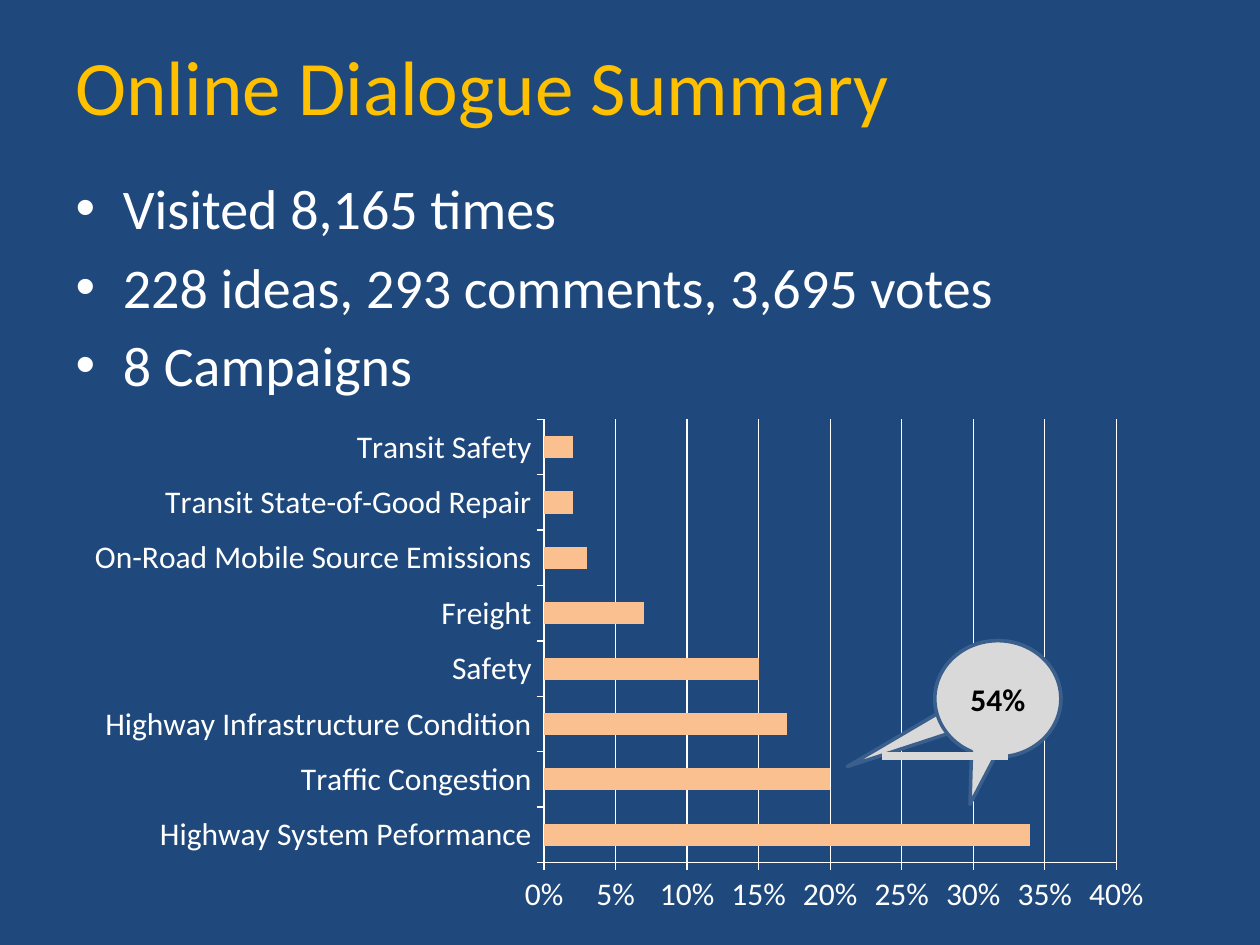
import pptx
import pptx.chart.data
import pptx.dml.color
import pptx.enum.chart
import pptx.enum.shapes
import pptx.enum.text
import pptx.util

COLORS = {
    "navy": "1F497D",
    "gold": "FFC000",
    "white": "FFFFFF",
    "peach": "FAC090",
    "grey": "D9D9D9",
    "outline": "3A5F8C",
    "black": "000000",
}
FONT = "Calibri"
WIDTH, HEIGHT = pptx.util.Inches(10), pptx.util.Inches(7.5)
CAMPAIGNS = {
    "Highway System Peformance": 0.34,
    "Traffic Congestion": 0.20,
    "Highway Infrastructure Condition": 0.17,
    "Safety": 0.15,
    "Freight": 0.07,
    "On-Road Mobile Source Emissions": 0.03,
    "Transit State-of-Good Repair": 0.02,
    "Transit Safety": 0.02,
}
POINTERS = [(-1.195, 0.583), (-0.221, 0.908)]


def color(name):
    """Return the named colour."""
    return pptx.dml.color.RGBColor.from_string(COLORS[name])


def area(left, top, width, height):
    """Turn shares of the slide's size into a position and size."""
    return [int(share * side) for share, side in
            zip((left, top, width, height), (WIDTH, HEIGHT) * 2)]


def move(shape, box):
    """Put a shape in a box."""
    shape.left, shape.top, shape.width, shape.height = box


def style_font(font, size, tone, bold=False):
    """Set the face, size, colour and weight of a font."""
    font.name = FONT
    font.size = pptx.util.Pt(size)
    font.bold = bold
    font.color.rgb = color(tone)


def write(frame, lines, size, tone, bold=False, align="LEFT", anchor="MIDDLE"):
    """Fill a text frame with one formatted paragraph per line."""
    frame.word_wrap = True
    frame.vertical_anchor = getattr(pptx.enum.text.MSO_ANCHOR, anchor)
    for index, line in enumerate(lines):
        para = frame.add_paragraph() if index else frame.paragraphs[0]
        para.alignment = getattr(pptx.enum.text.PP_ALIGN, align)
        span = para.add_run()
        span.text = line
        style_font(span.font, size, tone, bold)


def style_line(line, tone, width):
    """Set the colour and width of a line."""
    line.color.rgb = color(tone)
    line.width = pptx.util.Pt(width)


def add_campaign_chart(page, box):
    """Add the bar chart of campaign shares."""
    data = pptx.chart.data.CategoryChartData(number_format="0%")
    data.categories = list(CAMPAIGNS)
    data.add_series("Series 1", list(CAMPAIGNS.values()))
    kind = pptx.enum.chart.XL_CHART_TYPE.BAR_CLUSTERED
    chart = page.shapes.add_chart(kind, *box, data).chart
    chart.has_legend = chart.has_title = False
    style_font(chart.font, 18, "white")
    plot = chart.plots[0]
    plot.gap_width = 150
    plot.vary_by_categories = False
    fill = plot.series[0].format.fill
    fill.solid()
    fill.fore_color.rgb = color("peach")
    for axis in (chart.category_axis, chart.value_axis):
        axis.major_tick_mark = pptx.enum.chart.XL_TICK_MARK.OUTSIDE
        style_line(axis.format.line, "white", 0.75)
    values = chart.value_axis
    values.minimum_scale, values.maximum_scale, values.major_unit = 0, 0.4, 0.05
    values.has_major_gridlines = True
    style_line(values.major_gridlines.format.line, "white", 0.75)
    values.tick_labels.number_format = "0%"
    values.tick_labels.number_format_is_linked = False


def add_callout(group, box, pointer):
    """Add a total bubble whose tail ends at the pointer."""
    kind = pptx.enum.shapes.MSO_SHAPE.OVAL_CALLOUT
    bubble = group.shapes.add_shape(kind, *box)
    for index, value in enumerate(pointer):
        bubble.adjustments[index] = value
    bubble.shadow.inherit = False
    bubble.fill.solid()
    bubble.fill.fore_color.rgb = color("grey")
    style_line(bubble.line, "outline", 2)
    write(bubble.text_frame, ["54%"], 18, "black", bold=True, align="CENTER")


def add_stroke(group, points, tone, width):
    """Add an open line through points given in inches."""
    start, *rest = points
    scale = pptx.util.Inches(1)
    builder = group.shapes.build_freeform(*start, scale=scale)
    builder.add_line_segments(rest, close=False)
    stroke = builder.convert_to_shape()
    stroke.shadow.inherit = False
    stroke.fill.background()
    style_line(stroke.line, tone, width)


def main():
    """Build the dialogue summary slide."""
    deck = pptx.Presentation()
    deck.slide_width, deck.slide_height = WIDTH, HEIGHT
    page = deck.slides.add_slide(deck.slide_layouts[1])
    page.background.fill.solid()
    page.background.fill.fore_color.rgb = color("navy")

    title, body = page.placeholders
    move(title, area(0.05, 0.023, 0.9, 0.133))
    write(title.text_frame, ["Online Dialogue Summary"], 44, "gold")
    move(body, area(0.05, 0.177, 0.9, 0.716))
    facts = ["Visited 8,165 times", "228 ideas, 293 comments, 3,695 votes",
             "8 Campaigns"]
    write(body.text_frame, facts, 32, "white", anchor="TOP")

    add_campaign_chart(page, area(0.058, 0.433, 0.867, 0.544))
    group = page.shapes.add_group_shape()
    for pointer in POINTERS:
        add_callout(group, area(0.742, 0.678, 0.1, 0.123), pointer)
    add_stroke(group, [(7.44, 5.68), (7.48, 5.77), (7.5, 5.82)], "grey", 5)
    deck.save("out.pptx")


if __name__ == "__main__":
    main()
